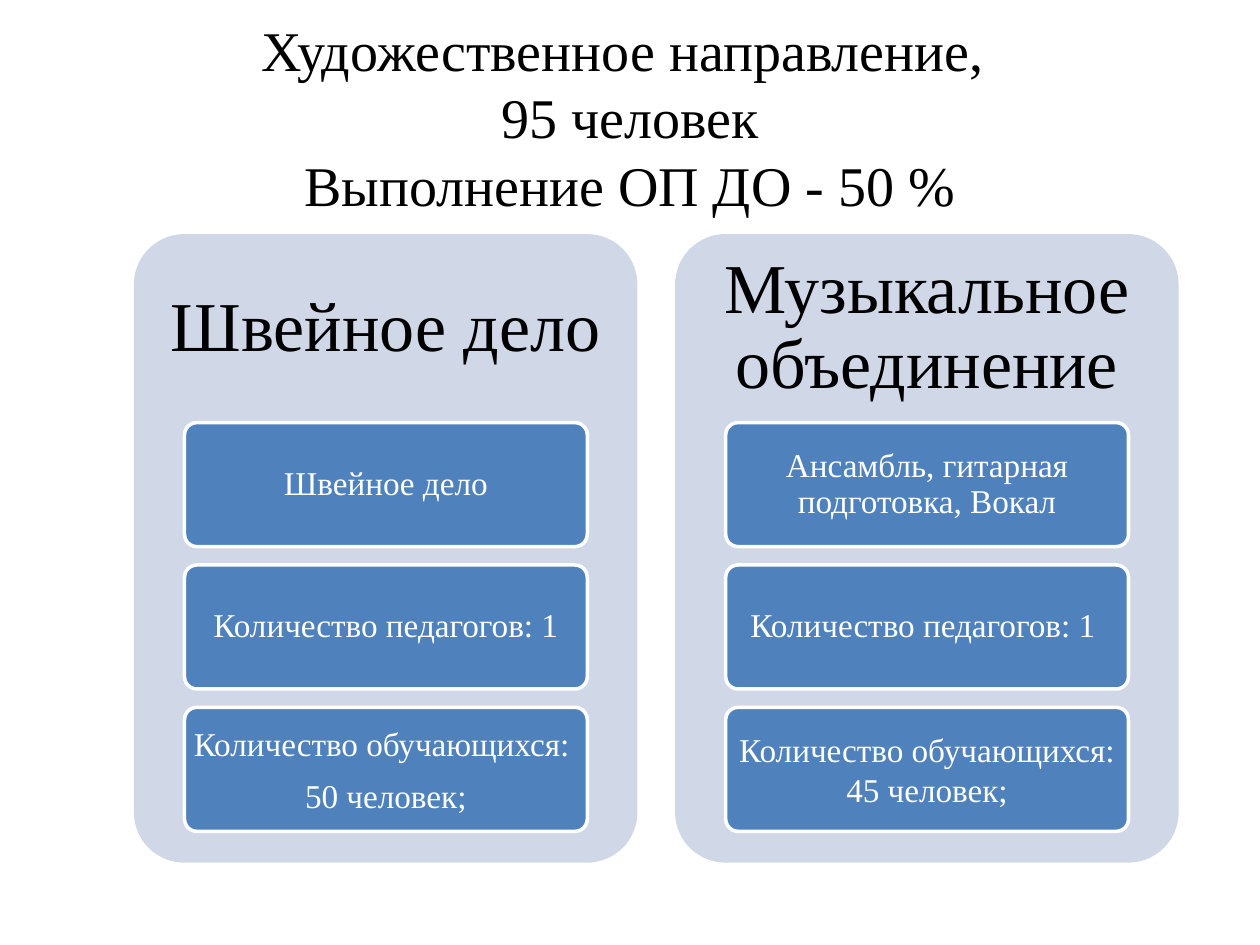
"""Build a slide with two panels of arts programme figures."""
from pptx import Presentation
from pptx.dml.color import RGBColor
from pptx.enum.shapes import MSO_SHAPE
from pptx.enum.text import MSO_ANCHOR, MSO_AUTO_SIZE, PP_ALIGN
from pptx.util import Cm, Pt


def write(box, text, size, color, spacing, margin):
    frame = box.text_frame
    frame.text = text
    frame.word_wrap = True
    frame.auto_size = MSO_AUTO_SIZE.NONE
    frame.vertical_anchor = MSO_ANCHOR.MIDDLE
    frame.margin_left = frame.margin_right = Cm(margin)
    frame.margin_top = frame.margin_bottom = Cm(margin)
    for paragraph in frame.paragraphs:
        paragraph.alignment = PP_ALIGN.CENTER
        paragraph.line_spacing = spacing
        paragraph.space_after = Pt(size * 0.35)
        paragraph.font.name = "Times New Roman"
        paragraph.font.size = Pt(size)
        paragraph.font.color.rgb = RGBColor.from_string(color)


def add_rounded(page, left, top, width, height, fill):
    shape = page.shapes.add_shape(
        MSO_SHAPE.ROUNDED_RECTANGLE, Cm(left), Cm(top), Cm(width), Cm(height))
    shape.adjustments[0] = 0.1
    shape.shadow.inherit = False
    shape.fill.solid()
    shape.fill.fore_color.rgb = RGBColor.from_string(fill)
    shape.line.fill.background()
    return shape


PANELS = [
    ("Швейное дело", [
        ("Швейное дело", 0.9),
        ("Количество педагогов: 1", 0.9),
        ("Количество обучающихся: \n50 человек;", 1.0)]),
    ("Музыкальное объединение", [
        ("Ансамбль, гитарная подготовка, Вокал", 0.9),
        ("Количество педагогов: 1 ", 0.9),
        ("Количество обучающихся: 45 человек;", 1.0)]),
]

deck = Presentation()
deck.slide_width, deck.slide_height = Cm(25.4), Cm(19.05)
page = deck.slides.add_slide(deck.slide_layouts[5])

title = page.shapes.title
title.left, title.top, title.width, title.height = Cm(1.27), Cm(0.76), Cm(22.86), Cm(3.18)
write(title, "Художественное направление, \v95 человек\vВыполнение ОП ДО - 50 %",
      32, "000000", 1.0, 0.13)

for column, (heading, cards) in enumerate(PANELS):
    left = 2.7 + column * 10.91
    add_rounded(page, left, 4.72, 10.15, 12.67, "D0D8E8")
    box = page.shapes.add_textbox(Cm(left), Cm(4.72), Cm(10.15), Cm(3.8))
    write(box, heading, 40, "000000", 0.9, 0.43)
    for row, (text, spacing) in enumerate(cards):
        card = add_rounded(page, left + 1.02, 8.52 + row * 2.87, 8.12, 2.5, "4F81BD")
        card.line.color.rgb = RGBColor.from_string("FFFFFF")
        card.line.width = Pt(2)
        write(card, text, 19, "FFFFFF", spacing, 0.11)

deck.save("out.pptx")
